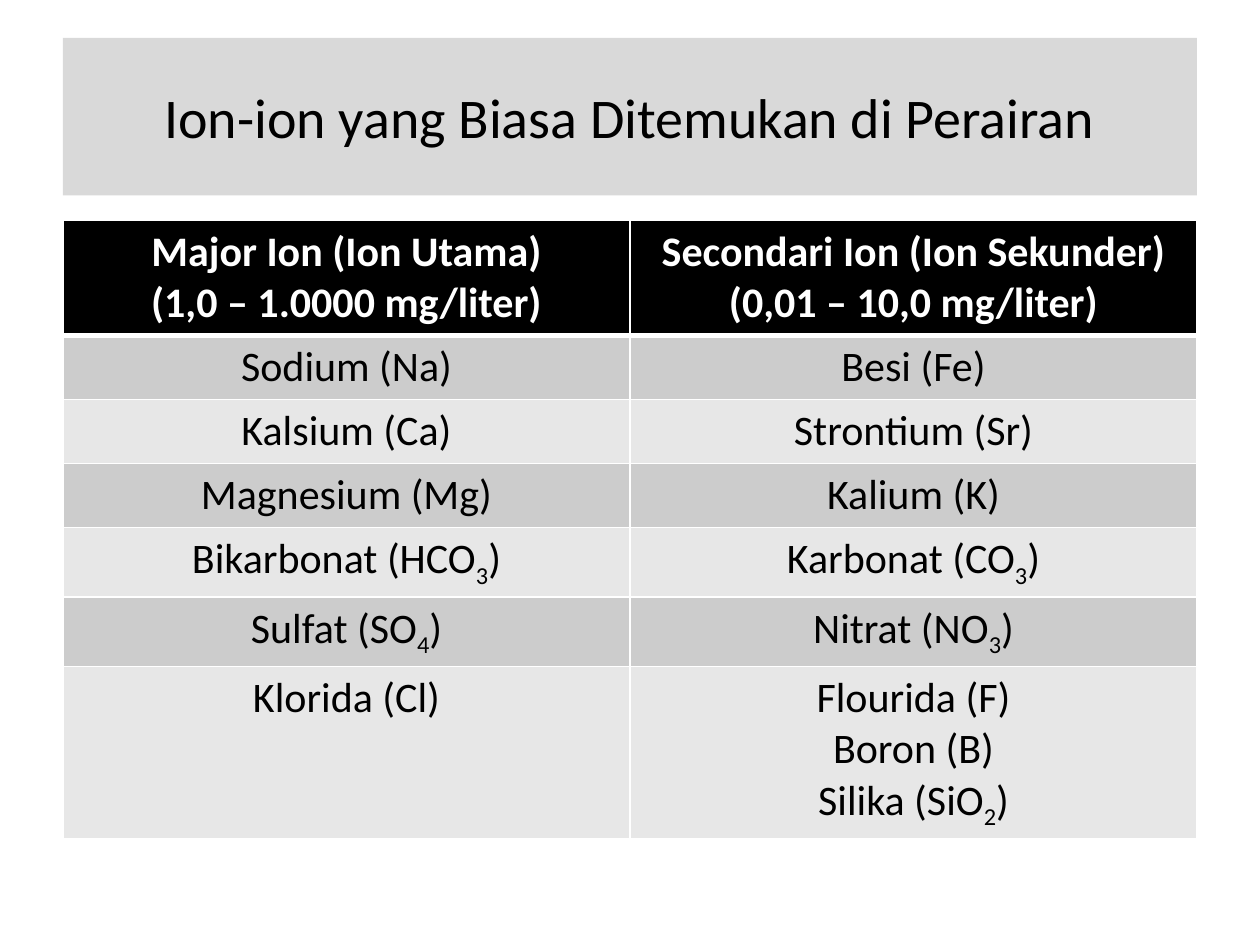
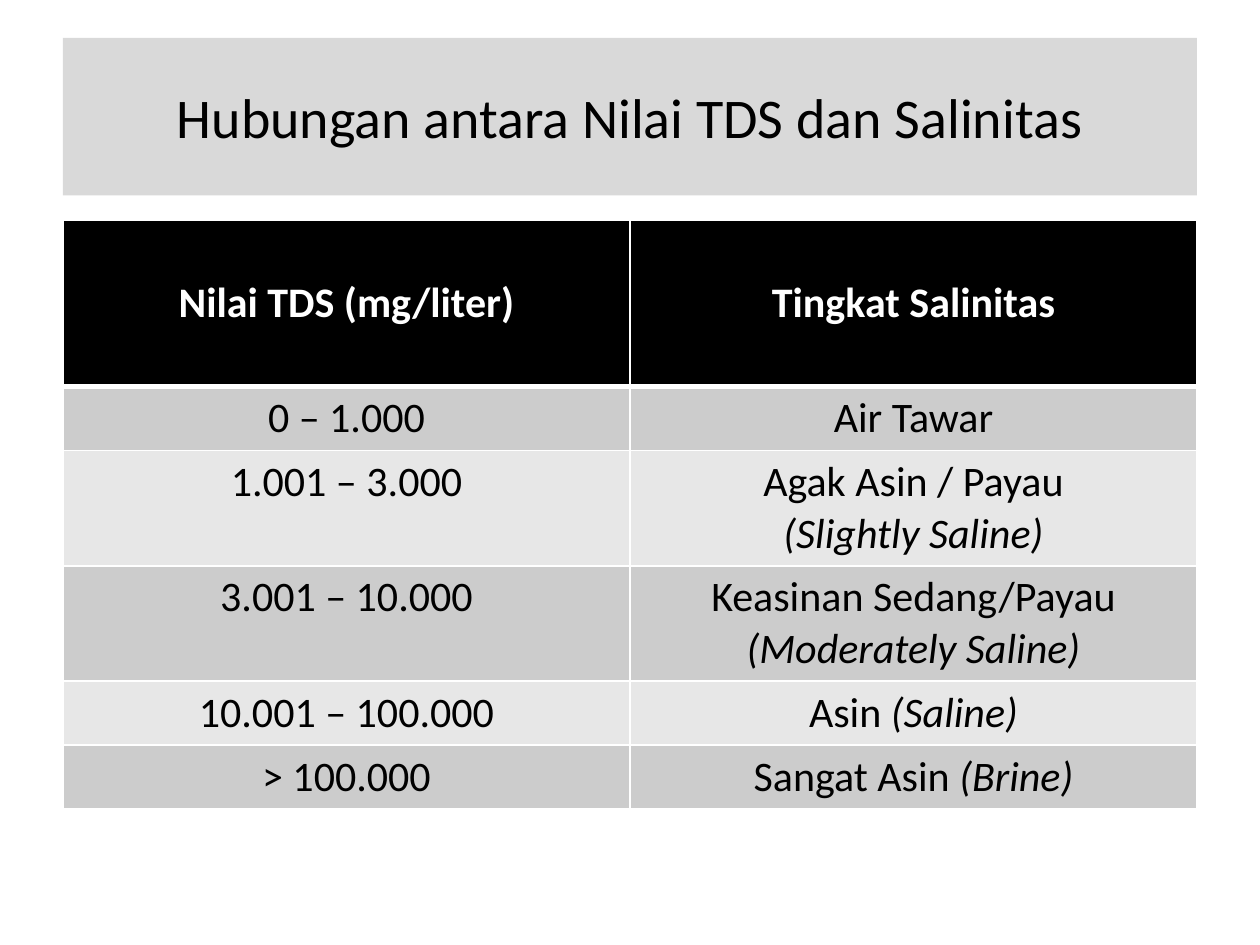
from dataclasses import dataclass
import itertools

import pptx
import pptx.dml.color
import pptx.enum.shapes
import pptx.enum.text
import pptx.oxml
import pptx.oxml.ns
import pptx.util

# The slide is a grid of 20 columns by 30 rows.
SLIDE_W, SLIDE_H = pptx.util.Inches(10), pptx.util.Inches(7.5)
COL, ROW = SLIDE_W // 20, SLIDE_H // 30
LEFT, WIDTH = 1, 18
TITLE_TOP, TITLE_ROWS, TABLE_TOP = 1.2, 5, 7

FONT = "Calibri"
TITLE_SIZE, CELL_SIZE = 32, 24
LINE_H = pptx.util.Pt(CELL_SIZE * 1.22)
CELL_PADDING = pptx.util.Inches(0.1)

BLACK, WHITE, TITLE_BAND = "000000", "FFFFFF", "D9D9D9"
STRIPES = ("CCCCCC", "E7E7E7")
THIN, THICK = 1, 3


@dataclass(frozen=True)
class Row:
    """Cell texts, with *italic* and _subscript_ marks; lines sets the height."""
    cells: tuple[str, ...]
    lines: int = 1


@dataclass(frozen=True)
class TableSlide:
    title: str
    header: Row
    body: tuple[Row, ...]


SLIDES = (
    TableSlide(
        "Ion-ion yang Biasa Ditemukan di Perairan",
        Row(("Major Ion (Ion Utama)\n(1,0 – 1.0000 mg/liter)",
             "Secondari Ion (Ion Sekunder)\n(0,01 – 10,0 mg/liter)"), 2),
        (
            Row(("Sodium (Na)", "Besi (Fe)")),
            Row(("Kalsium (Ca)", "Strontium (Sr)")),
            Row(("Magnesium (Mg)", "Kalium (K)")),
            Row(("Bikarbonat (HCO_3_)", "Karbonat (CO_3_)")),
            Row(("Sulfat (SO_4_)", "Nitrat (NO_3_)")),
            Row(("Klorida (Cl)", "Flourida (F)\nBoron (B)\nSilika (SiO_2_)"), 3),
        ),
    ),
    TableSlide(
        "Hubungan antara Nilai TDS dan Salinitas",
        Row(("Nilai TDS (mg/liter)", "Tingkat Salinitas"), 3),
        (
            Row(("0 – 1.000", "Air Tawar")),
            Row(("1.001 – 3.000", "Agak Asin / Payau\n*(Slightly Saline)*"), 2),
            Row(("3.001 – 10.000", "Keasinan Sedang/Payau *(Moderately Saline)*"), 2),
            Row(("10.001 – 100.000", "Asin *(Saline)*")),
            Row(("> 100.000", "Sangat Asin *(Brine)*")),
        ),
    ),
)


def rgb(value: str) -> pptx.dml.color.RGBColor:
    return pptx.dml.color.RGBColor.from_string(value)


def paint(fill, color: str) -> None:
    fill.solid()
    fill.fore_color.rgb = rgb(color)


def write(tf, text: str, size: float, color: str, bold: bool = False) -> None:
    """Write centred paragraphs, one per line of the marked-up text."""
    for i, line in enumerate(text.split("\n")):
        p = tf.add_paragraph() if i else tf.paragraphs[0]
        p.alignment = pptx.enum.text.PP_ALIGN.CENTER
        for j, part in enumerate(line.split("*")):
            for k, chunk in enumerate(part.split("_")):
                if not chunk:
                    continue
                r = p.add_run()
                r.text = chunk
                r.font.name = FONT
                r.font.size = pptx.util.Pt(size)
                r.font.bold = bold
                r.font.italic = j % 2 == 1
                r.font.color.rgb = rgb(color)
                if k % 2:
                    r.font._element.set("baseline", "-25000")


def add_borders(cell, top: float, bottom: float) -> None:
    tcPr = cell._tc.get_or_add_tcPr()
    for side, width in (("L", THIN), ("R", THIN), ("T", top), ("B", bottom)):
        tcPr.append(pptx.oxml.parse_xml(
            f'<a:ln{side} {pptx.oxml.ns.nsdecls("a")} w="{pptx.util.Pt(width)}">'
            f'<a:solidFill><a:srgbClr val="{WHITE}"/></a:solidFill></a:ln{side}>'))


def add_title(slide, text: str) -> None:
    sp = slide.shapes.add_shape(
        pptx.enum.shapes.MSO_SHAPE.RECTANGLE, LEFT * COL, int(TITLE_TOP * ROW),
        WIDTH * COL, TITLE_ROWS * ROW)
    sp.shadow.inherit = False
    paint(sp.fill, TITLE_BAND)
    sp.line.fill.background()
    tf = sp.text_frame
    tf.word_wrap = True
    tf.vertical_anchor = pptx.enum.text.MSO_ANCHOR.MIDDLE
    write(tf, text, TITLE_SIZE, BLACK)


def add_striped_table(slide, header: Row, body: tuple[Row, ...]) -> None:
    rows = (header, *body)
    heights = [CELL_PADDING + row.lines * LINE_H for row in rows]
    table = slide.shapes.add_table(
        len(rows), len(header.cells), LEFT * COL, TABLE_TOP * ROW,
        WIDTH * COL, sum(heights)).table
    table.horz_banding = False
    fills = itertools.chain([BLACK], itertools.cycle(STRIPES))
    for i, (row, height, fill) in enumerate(zip(rows, heights, fills)):
        table.rows[i].height = height
        is_header = i == 0
        for cell, text in zip(table.rows[i].cells, row.cells):
            add_borders(cell, THICK if i == 1 else THIN, THICK if is_header else THIN)
            paint(cell.fill, fill)
            if is_header:
                cell.vertical_anchor = pptx.enum.text.MSO_ANCHOR.MIDDLE
            write(cell.text_frame, text, CELL_SIZE,
                  WHITE if is_header else BLACK, bold=is_header)


def main() -> None:
    prs = pptx.Presentation()
    prs.slide_width, prs.slide_height = SLIDE_W, SLIDE_H
    for content in SLIDES:
        slide = prs.slides.add_slide(prs.slide_layouts[6])
        add_title(slide, content.title)
        add_striped_table(slide, content.header, content.body)
    prs.save("out.pptx")


if __name__ == "__main__":
    main()
